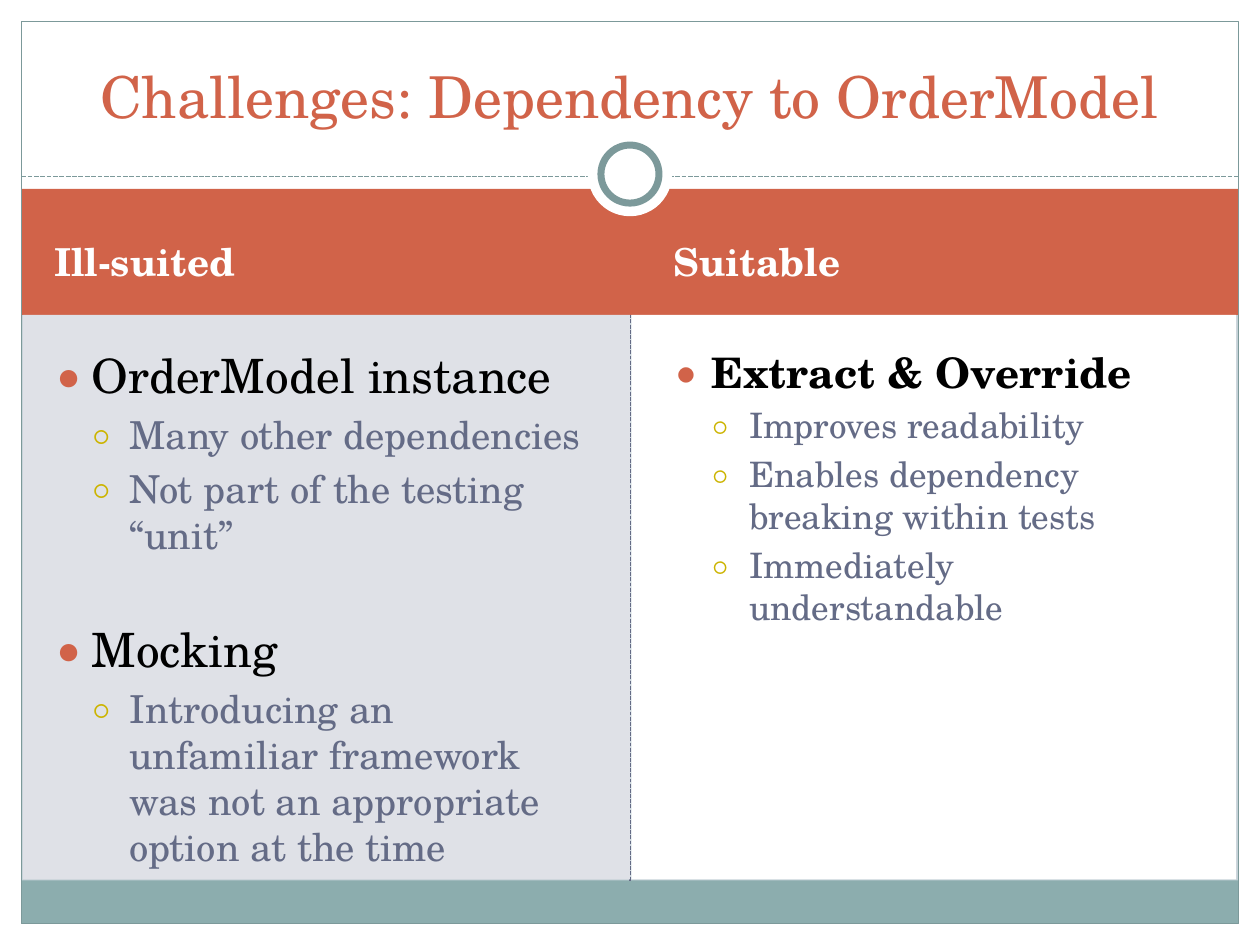
from dataclasses import dataclass

import pptx
import pptx.dml.color
import pptx.enum.dml
import pptx.enum.shapes
import pptx.enum.text
import pptx.oxml
import pptx.oxml.ns
import pptx.util
from pptx.util import Cm, Pt

SHAPES = pptx.enum.shapes.MSO_SHAPE
ANCHOR = pptx.enum.text.MSO_ANCHOR
ALIGN = pptx.enum.text.PP_ALIGN


@dataclass(frozen=True)
class Theme:
    font: str = "TeX Gyre Schola"
    backdrop: str = "C5D1D7"
    white: str = "FFFFFF"
    black: str = "000000"
    accent: str = "D16349"
    teal: str = "7C999A"
    footer: str = "8CADAE"
    slate: str = "646B86"
    panel: str = "DFE1E7"
    gold: str = "CCB400"
    title_size: float = 33
    heading_size: float = 22


@dataclass(frozen=True)
class Box:
    left: float
    top: float
    width: float
    height: float

    @property
    def right(self):
        return self.left + self.width

    @property
    def bottom(self):
        return self.top + self.height

    def lengths(self):
        return [Cm(value) for value in (self.left, self.top, self.width, self.height)]


THEME = Theme()
WIDTH, HEIGHT = 25.4, 19.05
CENTER = WIDTH / 2


def color(value):
    return pptx.dml.color.RGBColor.from_string(value)


def add_shape(slide, box, fill=None, line=None, line_width=0.75, kind=SHAPES.RECTANGLE):
    shape = slide.shapes.add_shape(kind, *box.lengths())
    shape.shadow.inherit = False
    if fill:
        shape.fill.solid()
        shape.fill.fore_color.rgb = color(fill)
    else:
        shape.fill.background()
    if line:
        shape.line.color.rgb = color(line)
        shape.line.width = Pt(line_width)
    else:
        shape.line.fill.background()
    return shape


def add_dashed_line(slide, start, end, line, width):
    connector = slide.shapes.add_connector(
        pptx.enum.shapes.MSO_CONNECTOR.STRAIGHT, *[Cm(value) for value in start + end])
    connector.line.color.rgb = color(line)
    connector.line.width = Pt(width)
    connector.line.dash_style = pptx.enum.dml.MSO_LINE.SQUARE_DOT
    properties = connector._element.spPr
    properties.append(pptx.oxml.parse_xml(
        f'<a:effectLst {pptx.oxml.ns.nsdecls("a")}/>'))
    # python-pptx writes the square dot as the system dot; this is the system dash
    properties.find(".//" + pptx.oxml.ns.qn("a:prstDash")).set("val", "sysDash")
    return connector


def add_text_frame(slide, box, anchor):
    frame = slide.shapes.add_textbox(*box.lengths()).text_frame
    frame.word_wrap = True
    frame.vertical_anchor = anchor
    return frame


def add_run(paragraph, text, size, text_color, bold=False):
    run = paragraph.add_run()
    run.text = text
    run.font.name = THEME.font
    run.font.size = Pt(size)
    run.font.bold = bold
    run.font.color.rgb = color(text_color)


def set_bullet(paragraph, level):
    character, bullet_color, percent = [("●", THEME.accent, 85), ("○", THEME.gold, 70)][level]
    paragraph.level = level
    properties = paragraph._p.get_or_add_pPr()
    properties.set("marL", str(Cm(0.76 * (level + 1))))
    properties.set("indent", str(-Cm(0.76)))
    namespace = pptx.oxml.ns.nsdecls("a")
    for element in (
        f'<a:buClr {namespace}><a:srgbClr val="{bullet_color}"/></a:buClr>',
        f'<a:buSzPct {namespace} val="{percent * 1000}"/>',
        f'<a:buFont {namespace} typeface="{THEME.font}"/>',
        f'<a:buChar {namespace} char="{character}"/>',
    ):
        properties.append(pptx.oxml.parse_xml(element))


def add_backdrop(slide, frame):
    # White margins around the frame
    margins = [
        Box(0, 0, WIDTH, 4.01),
        Box(0, frame.bottom, WIDTH, HEIGHT - frame.bottom),
        Box(0, 0, frame.left, HEIGHT),
        Box(frame.right, 0, WIDTH - frame.right, HEIGHT),
    ]
    for margin in margins:
        add_shape(slide, margin, THEME.white)

    # Footer bar, column divider and heading band
    footer_top = frame.bottom - 0.87
    footer = add_shape(slide, Box(frame.left, footer_top, frame.width, 0.87), THEME.footer)
    divider = add_dashed_line(slide, (CENTER, footer_top), (CENTER, 6.12), THEME.slate, 0.75)
    divider.begin_connect(footer, 0)
    add_shape(slide, Box(frame.left, 3.81, frame.width, 2.54), THEME.accent)

    # Title rule, outer frame and ring
    add_dashed_line(slide, (frame.left, 3.56), (frame.right, 3.56), THEME.teal, 0.9)
    add_shape(slide, frame, line=THEME.teal)
    for diameter, line in ((1.7, None), (1.17, THEME.teal)):
        ring = Box(CENTER - diameter / 2, 3.51 - diameter / 2, diameter, diameter)
        add_shape(slide, ring, THEME.white, line, 4, SHAPES.OVAL)


def add_title(slide, box, text):
    paragraph = add_text_frame(slide, box, ANCHOR.BOTTOM).paragraphs[0]
    paragraph.alignment = ALIGN.CENTER
    add_run(paragraph, text, THEME.title_size, THEME.accent)


def add_column(slide, box, fill, text_inset, heading, groups, sizes, bold=False):
    add_shape(slide, box, fill)
    text_left, text_width = box.left + text_inset, 11.23

    # Heading in the band above the panel
    heading_box = Box(text_left, box.top - 2.11, text_width, 2.03)
    paragraph = add_text_frame(slide, heading_box, ANCHOR.MIDDLE).paragraphs[0]
    add_run(paragraph, heading, THEME.heading_size, THEME.white, True)

    # Bulleted groups, set apart by the height of a line
    body = Box(text_left, box.top + 0.51, text_width, 10.62)
    frame = add_text_frame(slide, body, ANCHOR.TOP)
    for group_index, (topic, details) in enumerate(groups):
        for index, text in enumerate([topic] + details):
            level = min(index, 1)
            first = group_index == 0 and index == 0
            paragraph = frame.paragraphs[0] if first else frame.add_paragraph()
            set_bullet(paragraph, level)
            if not first:
                paragraph.space_before = Pt(sizes[level] * 0.2 if level else 36)
            add_run(paragraph, text, sizes[level],
                    THEME.slate if level else THEME.black, bold and level == 0)


def main():
    presentation = pptx.Presentation()
    presentation.slide_width, presentation.slide_height = Cm(WIDTH), Cm(HEIGHT)
    slide = presentation.slides.add_slide(presentation.slide_layouts[6])
    slide.background.fill.solid()
    slide.background.fill.fore_color.rgb = color(THEME.backdrop)

    add_backdrop(slide, Box(0.43, 0.43, WIDTH - 0.86, 18.19))
    add_column(slide, Box(0.46, 6.35, 12.24, 11.38), THEME.panel, 0.38, "Ill-suited", [
        ("OrderModel instance",
         ["Many other dependencies", "Not part of the testing “unit”"]),
        ("Mocking",
         ["Introducing an unfamiliar framework was not an appropriate option at the time"]),
    ], (27, 22))
    add_column(slide, Box(12.73, 6.35, 12.19, 11.38), THEME.white, 0.6, "Suitable", [
        ("Extract & Override",
         ["Improves readability", "Enables dependency breaking within tests",
          "Immediately understandable"]),
    ], (24, 20), bold=True)
    add_title(slide, Box(0.84, 0.64, 23.7, 2.11), "Challenges: Dependency to OrderModel")

    presentation.save("out.pptx")


if __name__ == "__main__":
    main()
